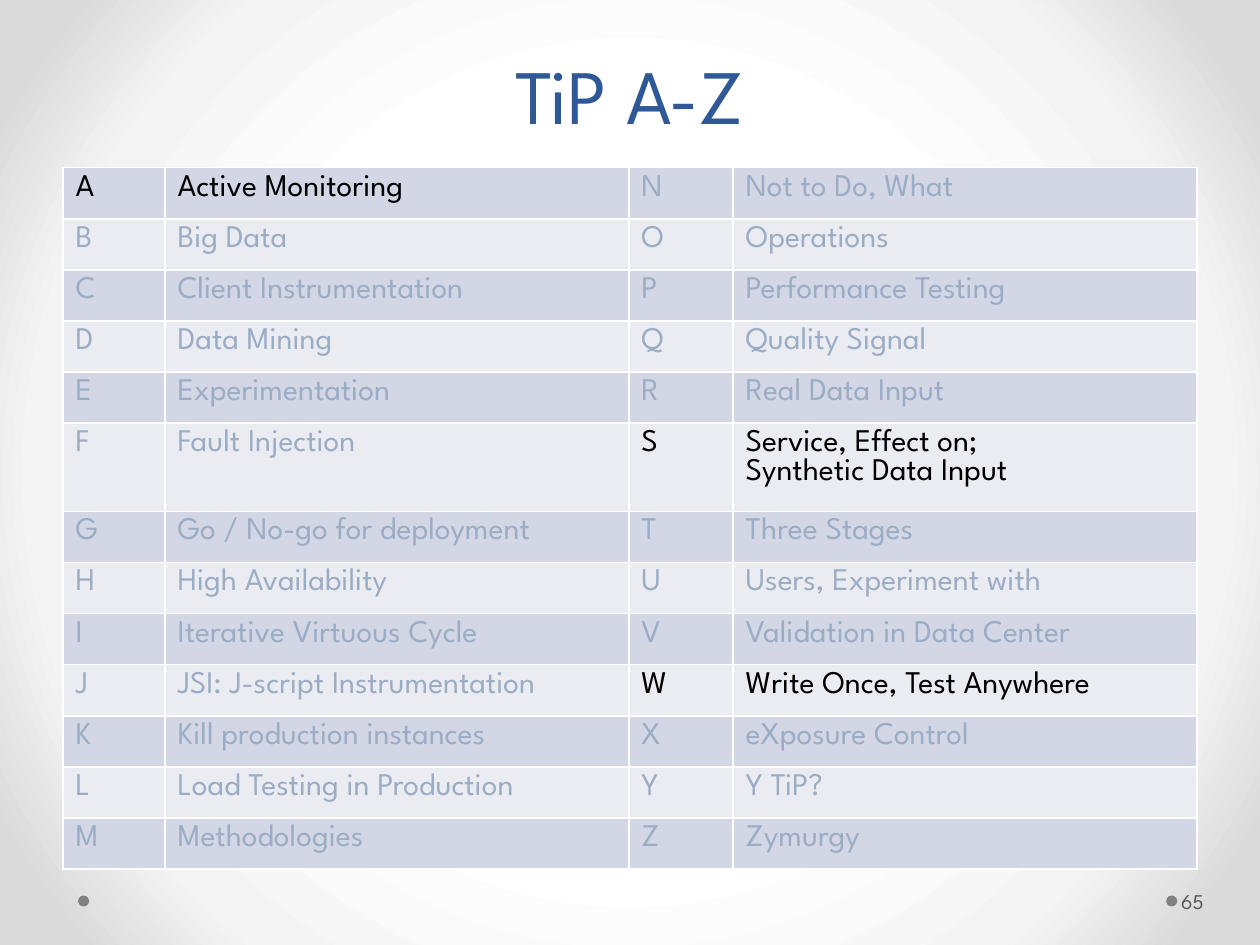
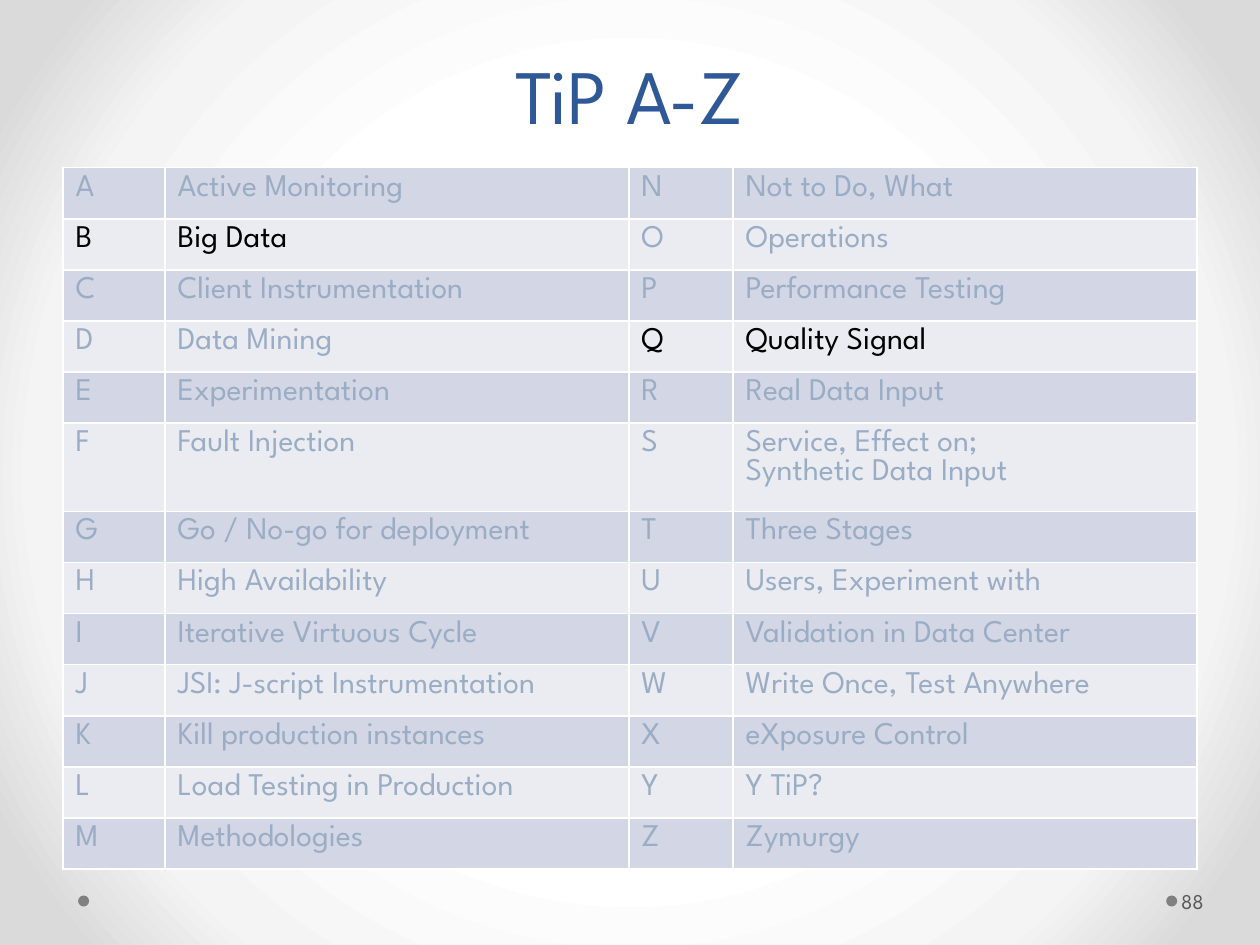
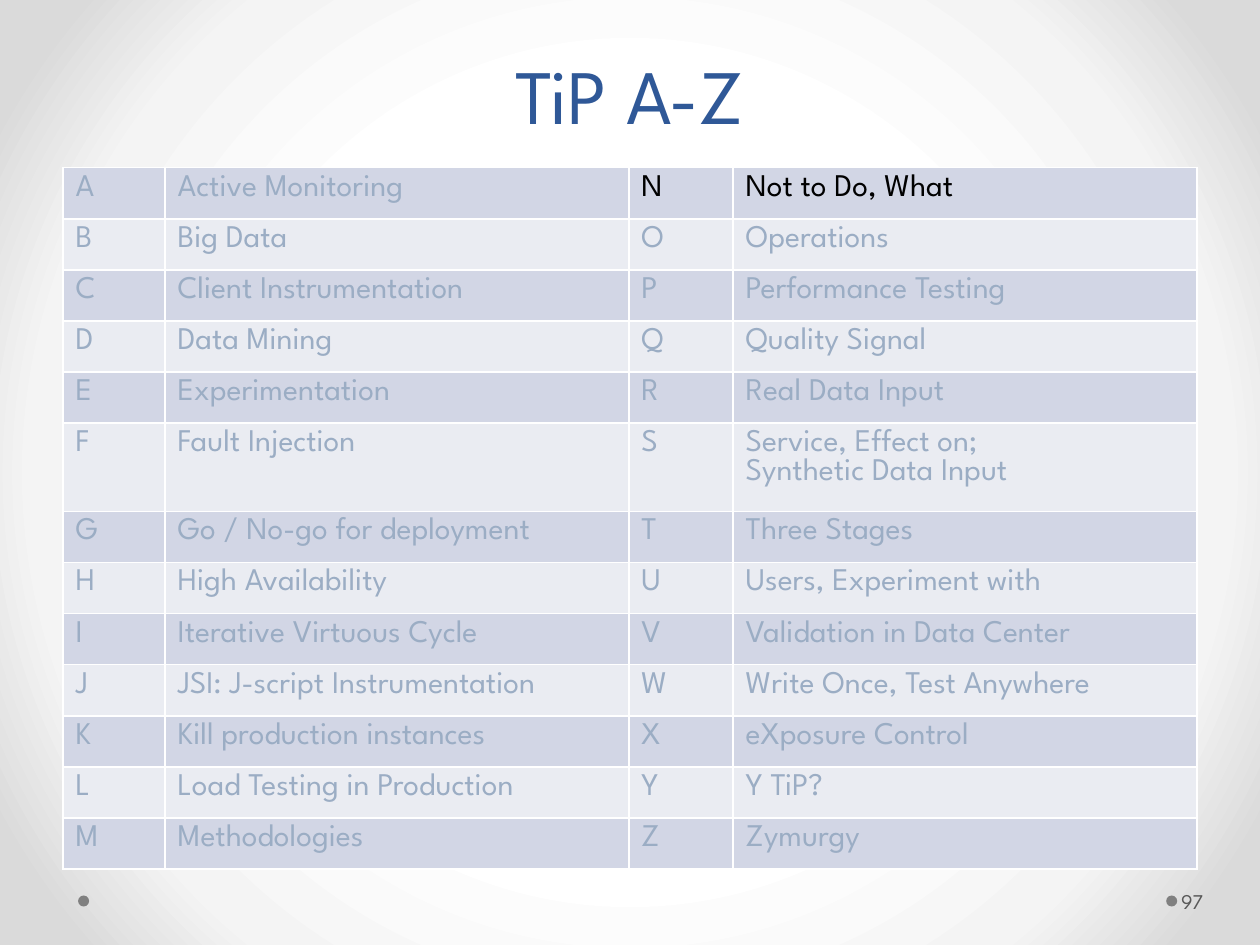
from dataclasses import dataclass

from lxml import etree
from pptx import Presentation
from pptx import util as u
from pptx.dml.color import RGBColor
from pptx.enum import shapes, text
from pptx.oxml import ns


@dataclass(frozen=True)
class Theme:
    """Colours, font and type sizes shared by the slides."""
    font: str = "League Spartan"
    title: str = "2F5897"
    active: str = "000000"
    muted: str = "9BADC4"
    bands: tuple = ("D2D6E5", "EAECF2")
    border: str = "FFFFFF"
    dot: str = "808080"
    number: str = "595959"
    backdrop: tuple = ((50, "FFFFFF"), (76, "F4F4F4"), (92, "DADADA"))
    title_size: int = 44
    title_spacing: int = 58
    table_size: int = 18
    number_size: int = 12


@dataclass(frozen=True)
class Box:
    """A rectangle in EMU that can be divided by percentages."""
    left: int
    top: int
    width: int
    height: int

    def inner(self, left, top, width, height):
        """Return the inner box given in percent of this one."""
        return Box(int(self.left + left * self.width / 100),
                   int(self.top + top * self.height / 100),
                   int(width * self.width / 100), int(height * self.height / 100))

    @property
    def place(self):
        """Return the four lengths in the order python-pptx takes them."""
        return self.left, self.top, self.width, self.height


THEME = Theme()
LETTERS = "ABCDEFGHIJKLMNOPQRSTUVWXYZ"
TOPICS = (
    "Active Monitoring", "Big Data", "Client Instrumentation", "Data Mining",
    "Experimentation", "Fault Injection", "Go / No-go for deployment",
    "High Availability", "Iterative Virtuous Cycle", "JSI: J-script Instrumentation",
    "Kill production instances", "Load Testing in Production", "Methodologies",
    "Not to Do, What", "Operations", "Performance Testing", "Quality Signal",
    "Real Data Input", "Service, Effect on;\nSynthetic Data Input", "Three Stages",
    "Users, Experiment with", "Validation in Data Center",
    "Write Once, Test Anywhere", "eXposure Control", "Y TiP?", "Zymurgy",
)
ROWS = len(TOPICS) // 2
COLUMN_PERCENTS = (9, 40.9, 9.2, 40.9)
SLIDES = ((65, "ASW"), (88, "BQ"), (97, "N"))


def write(text_frame, content, size, color):
    """Fill a text frame and format all its runs."""
    text_frame.text = content
    for paragraph in text_frame.paragraphs:
        for run in paragraph.runs:
            run.font.name = THEME.font
            run.font.size = u.Pt(size)
            run.font.color.rgb = RGBColor.from_string(color)


def add_color(parent, color):
    """Append a plain RGB colour element."""
    etree.SubElement(parent, ns.qn("a:srgbClr"), val=color)


def set_backdrop(master):
    """Give the master a circular gradient that darkens outwards."""
    fill = master.background.fill
    fill.gradient()
    gradient = master.element.find(".//" + ns.qn("a:gradFill"))
    for child in list(gradient):
        gradient.remove(child)
    stops = etree.SubElement(gradient, ns.qn("a:gsLst"))
    for position, color in THEME.backdrop:
        add_color(etree.SubElement(stops, ns.qn("a:gs"), pos=str(position * 1000)), color)
    circle = etree.SubElement(gradient, ns.qn("a:path"), {"path": "circle"})
    etree.SubElement(circle, ns.qn("a:fillToRect"), dict.fromkeys("ltrb", "50000"))


def add_title(slide, box, content):
    """Write the centred title at the bottom of its box."""
    text_frame = slide.shapes.add_textbox(*box.place).text_frame
    text_frame.word_wrap = True
    text_frame.vertical_anchor = text.MSO_ANCHOR.BOTTOM
    write(text_frame, content, THEME.title_size, THEME.title)
    paragraph = text_frame.paragraphs[0]
    paragraph.alignment = text.PP_ALIGN.CENTER
    paragraph.line_spacing = u.Pt(THEME.title_spacing)


def style_cell(cell, band):
    """Set the borders and the band fill of a cell."""
    properties = cell._tc.get_or_add_tcPr()
    for side in "LRTB":
        line = etree.SubElement(properties, ns.qn("a:ln" + side), w=str(u.Pt(1)))
        add_color(etree.SubElement(line, ns.qn("a:solidFill")), THEME.border)
    cell.fill.solid()
    cell.fill.fore_color.rgb = RGBColor.from_string(band)


def add_topic_table(slide, box, active_letters):
    """Lay out the alphabet in two halves and highlight the active letters."""
    table = slide.shapes.add_table(ROWS, len(COLUMN_PERCENTS), *box.place).table
    table.first_row = table.horz_banding = False
    for column, percent in zip(table.columns, COLUMN_PERCENTS):
        column.width = int(percent * box.width / 100)
    for index, entry in enumerate(zip(LETTERS, TOPICS)):
        half, row = divmod(index, ROWS)
        color = THEME.active if entry[0] in active_letters else THEME.muted
        for offset, content in enumerate(entry):
            cell = table.cell(row, 2 * half + offset)
            style_cell(cell, THEME.bands[row % 2])
            write(cell.text_frame, content, THEME.table_size, color)


def add_footer(slide, box, number):
    """Draw the two dots and the slide number after the second."""
    number_box = box.inner(93.5, 0, 6.5, 100)
    size = int(0.22 * box.height)
    top = box.top + (box.height - size) // 2
    for left in (box.left, number_box.left - size):
        dot = slide.shapes.add_shape(shapes.MSO_SHAPE.OVAL, left, top, size, size)
        dot.shadow.inherit = False
        dot.fill.solid()
        dot.fill.fore_color.rgb = RGBColor.from_string(THEME.dot)
        dot.line.fill.background()
    text_frame = slide.shapes.add_textbox(*number_box.place).text_frame
    text_frame.word_wrap = True
    text_frame.vertical_anchor = text.MSO_ANCHOR.MIDDLE
    text_frame.margin_left = u.Inches(0.03)
    text_frame.margin_right = u.Inches(0.05)
    write(text_frame, str(number), THEME.number_size, THEME.number)


def add_topic_slide(presentation, number, active_letters):
    """Add one alphabet slide."""
    slide = presentation.slides.add_slide(presentation.slide_layouts[6])
    page = Box(0, 0, presentation.slide_width, presentation.slide_height)
    add_title(slide, page.inner(5, 1, 90, 14.5), "TiP A-Z")
    add_topic_table(slide, page.inner(5, 17.75, 90, 70.3), active_letters)
    add_footer(slide, page.inner(6.2, 92.7, 93.3, 5.3), number)


def main():
    """Build and save the presentation."""
    presentation = Presentation()
    presentation.slide_width = u.Inches(10)
    presentation.slide_height = u.Inches(7.5)
    set_backdrop(presentation.slide_master)
    for number, active_letters in SLIDES:
        add_topic_slide(presentation, number, active_letters)
    presentation.save("out.pptx")


if __name__ == "__main__":
    main()
